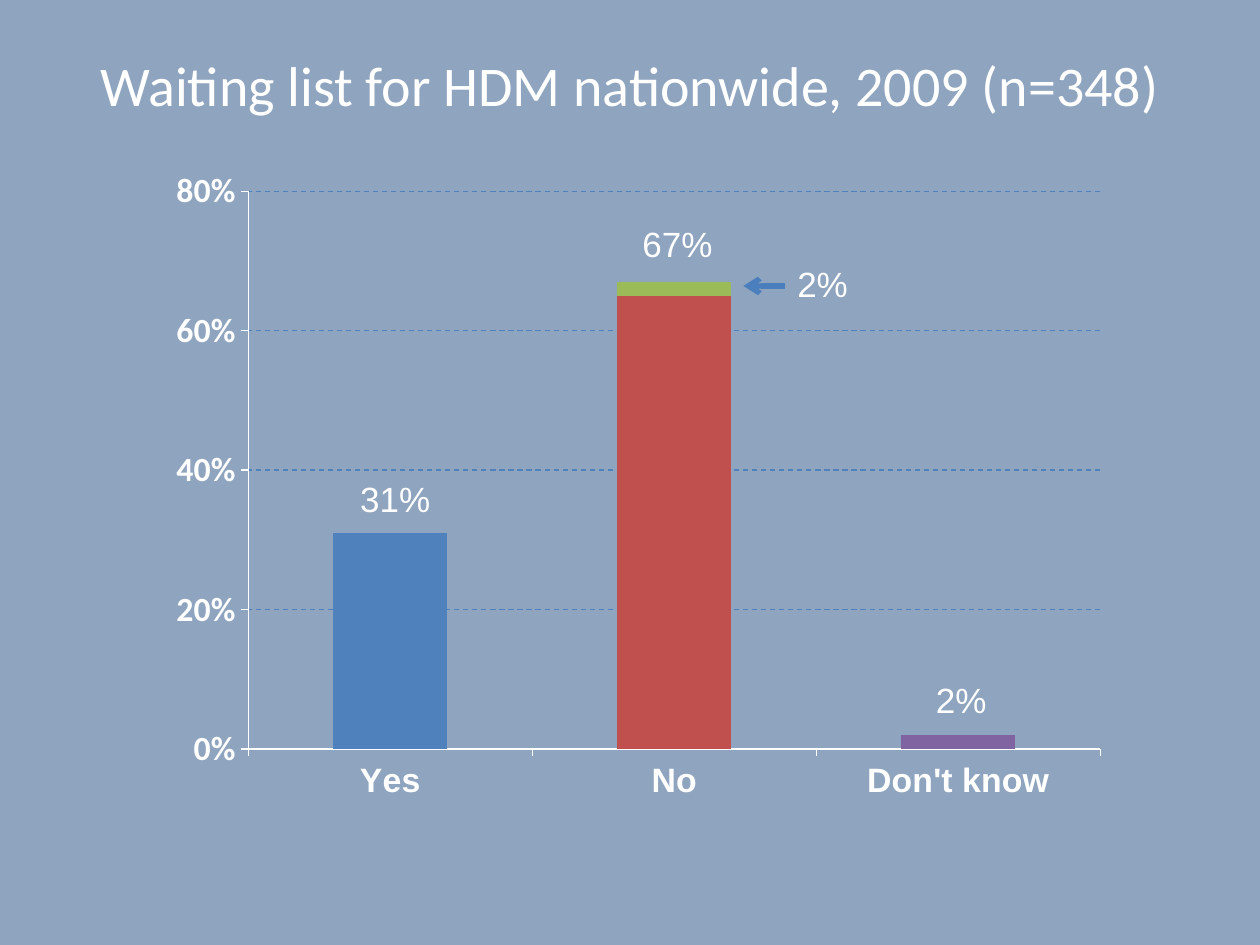
from lxml import etree
from pptx import Presentation
from pptx.chart import data
from pptx.dml.color import RGBColor
from pptx.enum import chart as ce, dml, shapes, text
from pptx.oxml import ns
from pptx.util import Pt

BACKGROUND = RGBColor(0x8F, 0xA4, 0xBE)
WHITE = RGBColor(0xFF, 0xFF, 0xFF)
BLUE = RGBColor(0x4F, 0x81, 0xBD)
RED = RGBColor(0xC0, 0x50, 0x4D)
GREEN = RGBColor(0x9B, 0xBB, 0x59)
PURPLE = RGBColor(0x80, 0x64, 0xA2)
ARROW = RGBColor(0x4B, 0x7E, 0xBC)

CATEGORIES = ["Yes", "No", "Don't know"]
SERIES = [
    ((0.31, None, None), BLUE),
    ((None, 0.65, None), RED),
    ((None, 0.02, None), GREEN),
    ((None, None, 0.02), PURPLE),
]
LABELS = [
    ("31%", 140.4, 183.6, 59),
    ("67%", 301.7, 37.4, 60),
    ("2%", 469.4, 298.1, 48),
    ("2%", 390.2, 60.5, 48),
]
PLOT = {"x": 0.142, "y": 0.06, "w": 0.828, "h": 0.811}


def add_text(slide, content, box, size, font, align=text.PP_ALIGN.LEFT):
    tb = slide.shapes.add_textbox(*map(Pt, box))
    tf = tb.text_frame
    tf.word_wrap = True
    tf.vertical_anchor = text.MSO_ANCHOR.MIDDLE
    tf.text = content
    p = tf.paragraphs[0]
    p.alignment = align
    f = p.runs[0].font
    f.size, f.name = Pt(size), font
    f.color.rgb = WHITE


def set_plot_layout(chart):
    area = chart._chartSpace.chart.plotArea
    for old in area.findall(ns.qn("c:layout")):
        area.remove(old)
    layout = etree.Element(ns.qn("c:layout"))
    manual = etree.SubElement(layout, ns.qn("c:manualLayout"))
    settings = {"layoutTarget": "inner", "xMode": "edge", "yMode": "edge", **PLOT}
    for tag, value in settings.items():
        etree.SubElement(manual, ns.qn(f"c:{tag}")).set("val", str(value))
    area.insert(0, layout)


def format_axis(axis, font):
    axis.major_tick_mark = ce.XL_TICK_MARK.OUTSIDE
    axis.minor_tick_mark = ce.XL_TICK_MARK.NONE
    axis.format.line.color.rgb = WHITE
    axis.format.line.width = Pt(0.75)
    f = axis.tick_labels.font
    f.size, f.bold, f.name = Pt(19.3), True, font
    f.color.rgb = WHITE


def add_columns(slide, box):
    cd = data.CategoryChartData(number_format="0%")
    cd.categories = CATEGORIES
    for i, (values, _) in enumerate(SERIES, 1):
        cd.add_series(f"Series {i}", values)
    chart = slide.shapes.add_chart(
        ce.XL_CHART_TYPE.COLUMN_STACKED, *map(Pt, box), cd).chart
    chart.has_legend = False
    chart.has_title = False
    chart.font.size, chart.font.name = Pt(19.3), "Calibri"
    chart.font.color.rgb = WHITE
    plot = chart.plots[0]
    plot.gap_width, plot.overlap = 150, 100
    plot.vary_by_categories = False
    for series, (_, color) in zip(plot.series, SERIES):
        series.format.fill.solid()
        series.format.fill.fore_color.rgb = color

    format_axis(chart.category_axis, "Arial")
    axis = chart.value_axis
    format_axis(axis, "Calibri")
    axis.minimum_scale, axis.maximum_scale, axis.major_unit = 0, 0.8, 0.2
    axis.tick_labels.number_format = "0%"
    axis.tick_labels.number_format_is_linked = False
    axis.has_major_gridlines = True
    grid = axis.major_gridlines.format.line
    grid.color.rgb = BLUE
    grid.width = Pt(0.75)
    grid.dash_style = dml.MSO_LINE.DASH
    set_plot_layout(chart)


def add_arrow(slide, start, end, y):
    cn = slide.shapes.add_connector(
        shapes.MSO_CONNECTOR.STRAIGHT, Pt(start), Pt(y), Pt(end), Pt(y))
    cn.line.color.rgb = ARROW
    cn.line.width = Pt(3)
    sp_pr = cn._element.spPr
    etree.SubElement(sp_pr.find(ns.qn("a:ln")), ns.qn("a:tailEnd")).set("type", "arrow")
    etree.SubElement(sp_pr, ns.qn("a:effectLst"))


def add_chart_region(slide, box):
    left, top, _, _ = box
    add_columns(slide, box)
    for label, x, y, width in LABELS:
        add_text(slide, label, (left + x, top + y, width, 31.5), 20, "Arial")
    add_arrow(slide, left + 390.2, left + 366.5, top + 77.7)


def main():
    prs = Presentation()
    prs.slide_width, prs.slide_height = Pt(720), Pt(540)
    slide = prs.slides.add_slide(prs.slide_layouts[6])
    slide.background.fill.solid()
    slide.background.fill.fore_color.rgb = BACKGROUND
    add_chart_region(slide, (58.3, 85.7, 588.2, 393.1))
    add_text(slide, "Waiting list for HDM nationwide, 2009 (n=348)",
             (36, 18, 648, 60), 32, "Calibri", text.PP_ALIGN.CENTER)
    prs.save("out.pptx")


if __name__ == "__main__":
    main()
